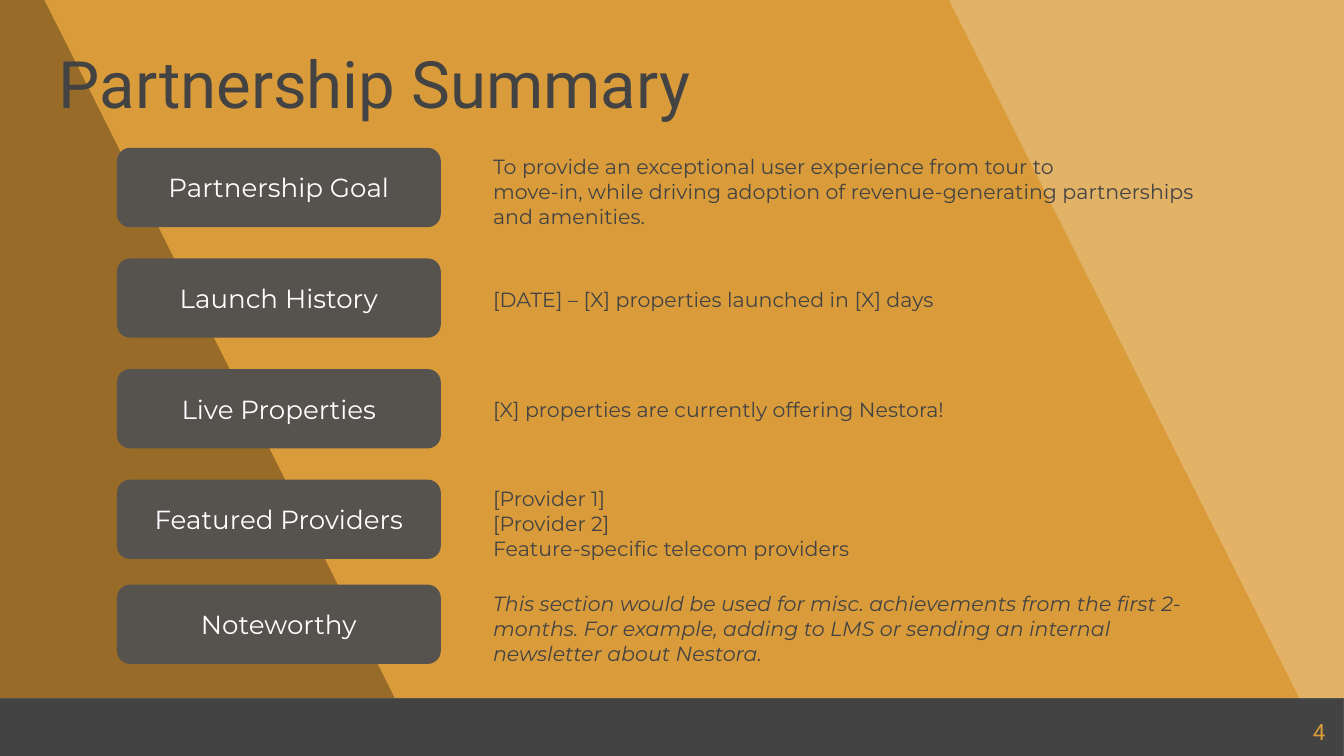
from lxml import etree
from pptx import Presentation
from pptx import util as u
from pptx.dml.color import RGBColor
from pptx.enum import shapes, text
from pptx.oxml.ns import qn

AMBER, CHARCOAL, STONE = "DA9C3A", "434343", "56534F"
BLACK, WHITE = "000000", "FFFFFF"
HEADING, BODY = "Roboto", "Montserrat"

# The grid has 100 columns across the slide; rows are as tall as columns are wide
WIDTH = u.Inches(10)
CELL = WIDTH // 100
BAND_HEIGHT = 52
LABEL_HEIGHT = 5.9


def color(hex_code):
    return RGBColor.from_string(hex_code)


class SummarySlide:
    def __init__(self, deck):
        self.slide = deck.slides.add_slide(deck.slide_layouts[6])

    def grid(self, *cells):
        return [round(cell * CELL) for cell in cells]

    def paint(self, shape, fill, opacity=100, line=None):
        shape.shadow.inherit = False
        shape.fill.solid()
        shape.fill.fore_color.rgb = color(fill)
        if opacity < 100:
            tint = shape.element.spPr.find(qn("a:solidFill"))[0]
            etree.SubElement(tint, qn("a:alpha")).set("val", str(opacity * 1000))
        if line:
            shape.line.color.rgb = color(line)
            shape.line.width = u.Pt(0.75)
        else:
            shape.line.fill.background()

    def panel(self, at, fill, opacity=100, line=None, kind=shapes.MSO_SHAPE.RECTANGLE):
        shape = self.slide.shapes.add_shape(kind, *self.grid(*at))
        self.paint(shape, fill, opacity, line)
        return shape

    def slanted_band(self, top_right, bottom_right, fill, opacity=100):
        outline = self.slide.shapes.build_freeform(0, 0, scale=1)
        corners = [(top_right, 0), (bottom_right, BAND_HEIGHT), (0, BAND_HEIGHT)]
        outline.add_line_segments([self.grid(*corner) for corner in corners])
        self.paint(outline.convert_to_shape(), fill, opacity)

    def set_text(self, shape, lines, size, font, ink, align=text.PP_ALIGN.LEFT,
                 anchor=text.MSO_ANCHOR.MIDDLE, inset=1, italic=False):
        frame = shape.text_frame
        frame.word_wrap = True
        frame.vertical_anchor = anchor
        frame.margin_left, frame.margin_right = self.grid(1, 1)
        frame.margin_top, frame.margin_bottom = self.grid(inset, inset)
        frame.text = "\n".join(lines)
        for paragraph in frame.paragraphs:
            paragraph.alignment = align
            paragraph.font.size = u.Pt(size)
            paragraph.font.name = font
            paragraph.font.color.rgb = color(ink)
            if italic:
                paragraph.font.italic = True

    def text_box(self, at, lines, size, font, ink, **style):
        box = self.slide.shapes.add_textbox(*self.grid(*at))
        self.set_text(box, lines, size, font, ink, **style)

    def label(self, top, caption):
        pill = self.panel((8.7, top, 24.1, LABEL_HEIGHT), STONE,
                          kind=shapes.MSO_SHAPE.ROUNDED_RECTANGLE)
        self.set_text(pill, [caption], 14, BODY, WHITE,
                      align=text.PP_ALIGN.CENTER, inset=0.5)

    def detail(self, top, lines, italic=False):
        # Short details sit at the middle of their label, long ones at its top
        short = len("".join(lines)) < 50
        height = 2.7 if short else 6.2
        offset = (LABEL_HEIGHT - height) / 2 if short else 0
        self.text_box((35.7, top + offset, 56.1, height), lines, 11, BODY, CHARCOAL,
                      anchor=text.MSO_ANCHOR.TOP, inset=0.5, italic=italic)


SECTIONS = [
    ("Partnership Goal", [
        "To provide an exceptional user experience from tour to",
        "move-in, while driving adoption of revenue-generating partnerships and amenities."]),
    ("Launch History", ["[DATE] – [X] properties launched in [X] days"]),
    ("Live Properties", ["[X] properties are currently offering Nestora!"]),
    ("Featured Providers", [
        "[Provider 1]", "[Provider 2]", "Feature-specific telecom providers"]),
    ("Noteworthy", [
        "This section would be used for misc. achievements from the first 2-months. "
        "For example, adding to LMS or sending an internal newsletter about Nestora."]),
]


def main():
    deck = Presentation()
    deck.slide_width, deck.slide_height = WIDTH, WIDTH * 9 // 16
    summary = SummarySlide(deck)

    # Slanted background and footer
    summary.panel((0, 0, 100, BAND_HEIGHT), AMBER, opacity=77)
    summary.slanted_band(70.6, 96.7, AMBER)
    summary.slanted_band(3.3, 29.4, BLACK, opacity=30)
    summary.panel((-0.1, BAND_HEIGHT, 100.1, 4.3), CHARCOAL, line=STONE)
    summary.text_box((93.6, 53.2, 6, 2.5), ["4"], 12, HEADING, AMBER,
                     align=text.PP_ALIGN.RIGHT)

    # Title
    summary.text_box((3.4, 2.6, 79.3, 7), ["Partnership Summary"], 35, HEADING, CHARCOAL)

    # Labels and details: even rows, with the last one pulled up above the footer
    last = len(SECTIONS) - 1
    for row, (caption, lines) in enumerate(SECTIONS):
        top = 43.5 if row == last else 11 + 8.23 * row
        summary.label(top, caption)
        summary.detail(top, lines, italic=row == last)

    deck.save("out.pptx")


if __name__ == "__main__":
    main()
